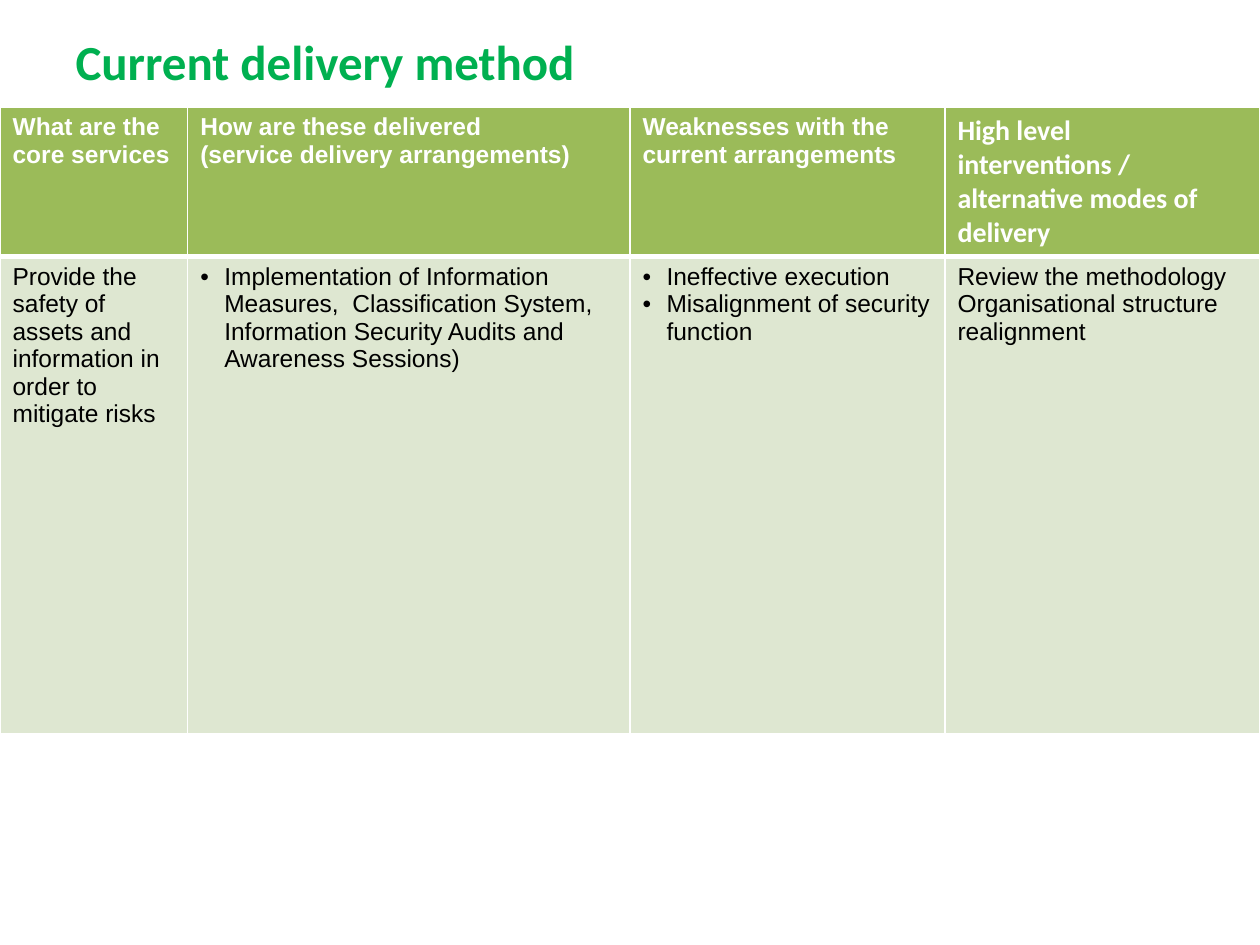
from lxml.etree import SubElement
from pptx import Presentation
from pptx.dml.color import RGBColor
from pptx.enum.text import MSO_ANCHOR, PP_ALIGN
from pptx.oxml.ns import qn
from pptx.util import Inches, Pt

GREEN = RGBColor(0x00, 0xB0, 0x50)
OLIVE = RGBColor(0x9B, 0xBB, 0x59)
PALE = RGBColor(0xDE, 0xE7, 0xD1)
WHITE = RGBColor(0xFF, 0xFF, 0xFF)
BLACK = RGBColor(0x00, 0x00, 0x00)


def write(frame, text, size=14, font="Arial", color=BLACK, bold=False, bullet=False):
    frame.text = text
    for para in frame.paragraphs:
        para.alignment = PP_ALIGN.LEFT
        for run in para.runs:
            run.font.size = Pt(size)
            run.font.name = font
            run.font.bold = bold
            run.font.color.rgb = color
        if bullet:
            props = para._p.get_or_add_pPr()
            props.set("marL", str(Inches(0.19)))
            props.set("indent", str(-Inches(0.19)))
            SubElement(props, qn("a:buFont"), typeface="Arial")
            SubElement(props, qn("a:buChar"), char="•")


def edge(cell, side, width):
    line = SubElement(cell._tc.get_or_add_tcPr(), qn(f"a:ln{side}"), w=str(Pt(width)))
    fill = SubElement(line, qn("a:solidFill"))
    SubElement(fill, qn("a:srgbClr"), val=str(WHITE))


deck = Presentation()
deck.slide_width, deck.slide_height = Inches(10), Inches(7.5)
slide = deck.slides.add_slide(deck.slide_layouts[5])

# Title
title = slide.shapes.title
title.left, title.top = Inches(0.5), Inches(0.2)
title.width, title.height = Inches(9), Inches(0.57)
write(title.text_frame, "Current delivery method", size=28, font="Calibri",
      color=GREEN, bold=True)
title.text_frame.vertical_anchor = MSO_ANCHOR.TOP

# Table text: heading, body, whether the body has bullets
cols = [
    (1.49, "What are the core services",
     "Provide the safety of assets and information in order to mitigate risks", False),
    (3.51, "How are these delivered\n(service delivery arrangements)",
     "Implementation of Information Measures,  Classification System, "
     "Information Security Audits and Awareness Sessions)", True),
    (2.5, "Weaknesses with the current arrangements",
     "Ineffective execution\nMisalignment of security function", True),
    (2.5, "High level interventions / alternative modes of delivery",
     "Review the methodology\nOrganisational structure realignment", False),
]

# Table grid
table = slide.shapes.add_table(2, len(cols), Inches(0), Inches(0.85),
                               Inches(10), Inches(4.97)).table
table.rows[0].height = Inches(1.18)
table.rows[1].height = Inches(3.79)

for i, (width, head, body, bullet) in enumerate(cols):
    table.columns[i].width = Inches(width)
    top, low = table.cell(0, i), table.cell(1, i)

    # White rules, with a thick one under the heading
    for cell, rules in ((top, (1, 1, 1, 3)), (low, (1, 1, 3, 1))):
        for side, rule in zip("LRTB", rules):
            edge(cell, side, rule)

    for cell, color in ((top, OLIVE), (low, PALE)):
        cell.fill.solid()
        cell.fill.fore_color.rgb = color

    last = i == len(cols) - 1
    write(top.text_frame, head, size=16 if last else 14,
          font="Calibri" if last else "Arial", color=WHITE, bold=True)
    write(low.text_frame, body, bullet=bullet)

deck.save("out.pptx")
